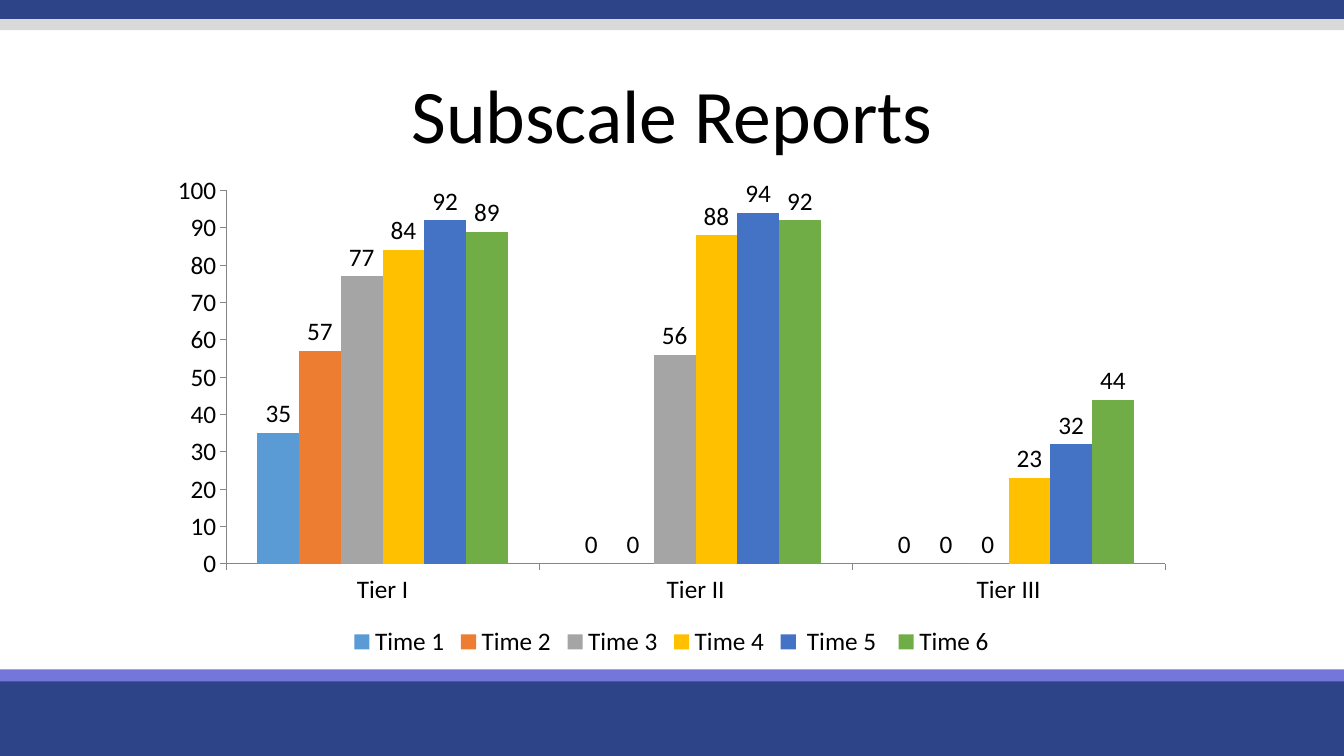
from pptx import Presentation
from pptx.chart.data import CategoryChartData
from pptx.dml.color import RGBColor
from pptx.enum import chart as ch, shapes, text
from pptx.util import Inches, Pt

NAVY = RGBColor(0x2E, 0x44, 0x88)
VIOLET = RGBColor(0x74, 0x76, 0xDA)
SILVER = RGBColor(0xD9, 0xD9, 0xD9)
AXIS_GRAY = RGBColor(0x86, 0x86, 0x86)
BLACK = RGBColor(0, 0, 0)
FONT = "Calibri"
WIDTH = 13.33

BANDS = [  # top, height, colour
    (6.7, 0.8, NAVY),
    (6.64, 0.12, VIOLET),
    (-0.03, 0.22, NAVY),
    (0.19, 0.11, SILVER),
]
TIERS = ["Tier I", "Tier II", "Tier III"]
SERIES = [  # name, value per tier, colour
    ("Time 1", (35, 0, 0), RGBColor(0x5B, 0x9B, 0xD5)),
    ("Time 2", (57, 0, 0), RGBColor(0xED, 0x7D, 0x31)),
    ("Time 3", (77, 56, 0), RGBColor(0xA5, 0xA5, 0xA5)),
    ("Time 4", (84, 88, 23), RGBColor(0xFF, 0xC0, 0x00)),
    (" Time 5 ", (92, 94, 32), RGBColor(0x44, 0x72, 0xC4)),
    ("Time 6", (89, 92, 44), RGBColor(0x70, 0xAD, 0x47)),
]


def style_font(font, size):
    font.name = FONT
    font.size = Pt(size)
    font.color.rgb = BLACK


def add_band(page, top, height, color):
    band = page.shapes.add_shape(shapes.MSO_SHAPE.RECTANGLE, 0, Inches(top),
                                 Inches(WIDTH), Inches(height))
    band.shadow.inherit = False
    band.fill.solid()
    band.fill.fore_color.rgb = color
    band.line.fill.background()


def add_title(page, wording):
    box = page.shapes.add_textbox(0, Inches(0.71), Inches(WIDTH), Inches(0.93))
    frame = box.text_frame
    frame.word_wrap = True
    frame.vertical_anchor = text.MSO_ANCHOR.BOTTOM
    para = frame.paragraphs[0]
    para.text = wording
    para.alignment = text.PP_ALIGN.CENTER
    para.line_spacing = 0.9
    style_font(para.font, 54)


def style_axis(axis):
    axis.has_major_gridlines = False
    axis.major_tick_mark = ch.XL_TICK_MARK.OUTSIDE
    axis.minor_tick_mark = ch.XL_TICK_MARK.NONE
    axis.format.line.color.rgb = AXIS_GRAY
    axis.format.line.width = Pt(0.75)


def add_score_chart(page):
    data = CategoryChartData(number_format="General")
    data.categories = TIERS
    for name, scores, _ in SERIES:
        data.add_series(name, scores)
    chart = page.shapes.add_chart(
        ch.XL_CHART_TYPE.COLUMN_CLUSTERED, Inches(1.56), Inches(1.64),
        Inches(10.2), Inches(4.93), data).chart
    chart.has_title = False
    style_font(chart.font, 18)
    chart.has_legend = True
    chart.legend.position = ch.XL_LEGEND_POSITION.BOTTOM
    chart.legend.include_in_layout = False

    style_axis(chart.category_axis)
    style_axis(chart.value_axis)
    chart.value_axis.minimum_scale = 0
    chart.value_axis.maximum_scale = 100
    chart.value_axis.major_unit = 10

    plot = chart.plots[0]
    plot.gap_width = 150
    plot.overlap = 0
    plot.vary_by_categories = False
    for series, (_, _, color) in zip(plot.series, SERIES):
        series.format.fill.solid()
        series.format.fill.fore_color.rgb = color
        labels = series.data_labels
        labels.show_value = True
        labels.position = ch.XL_LABEL_POSITION.OUTSIDE_END


def main():
    deck = Presentation()
    deck.slide_width = Inches(WIDTH)
    deck.slide_height = Inches(7.5)
    page = deck.slides.add_slide(deck.slide_layouts[6])
    for band in BANDS:
        add_band(page, *band)
    add_title(page, "Subscale Reports")
    add_score_chart(page)
    deck.save("out.pptx")


if __name__ == "__main__":
    main()
